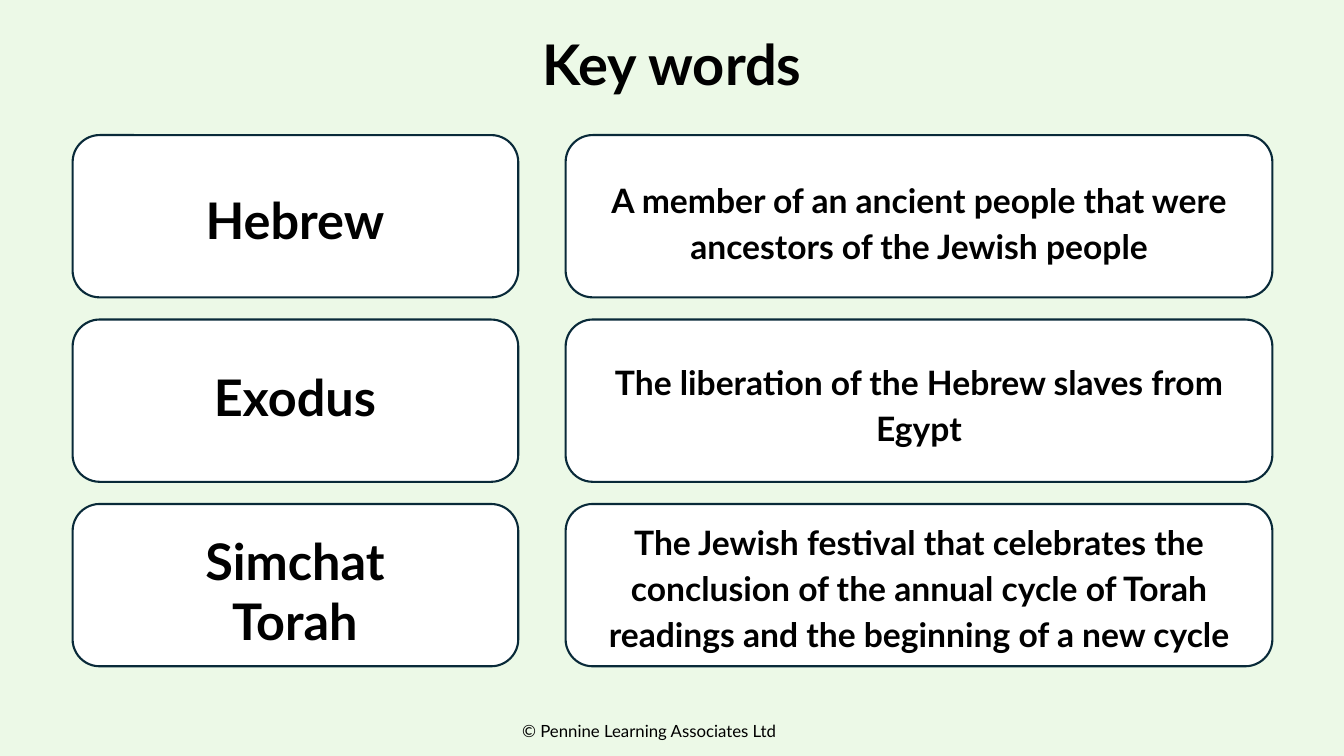
from dataclasses import dataclass

import pptx
import pptx.dml.color
import pptx.enum.shapes
import pptx.enum.text
import pptx.slide
import pptx.util

Inches = pptx.util.Inches
Align = pptx.enum.text.PP_ALIGN
Anchor = pptx.enum.text.MSO_ANCHOR


@dataclass(frozen=True)
class Theme:
    font: str = "Lato"
    background: str = "ECF9E7"
    card: str = "FFFFFF"
    outline: str = "092A39"
    ink: str = "000000"
    title_size: int = 40
    term_size: int = 36
    definition_size: int = 24
    footer_size: int = 12


@dataclass(frozen=True)
class Frame:
    left: float
    top: float
    width: float
    height: float

    def lengths(self) -> tuple[int, int, int, int]:
        return (Inches(self.left), Inches(self.top),
                Inches(self.width), Inches(self.height))


@dataclass(frozen=True)
class TextStyle:
    size: int
    bold: bool = True
    align: Align = Align.CENTER
    line_spacing: float = 1.0
    anchor: Anchor = Anchor.TOP


@dataclass(frozen=True)
class KeyWord:
    term: str
    term_top: float
    term_height: float
    definition: str
    definition_top: float
    definition_height: float


THEME = Theme()
TITLE = TextStyle(THEME.title_size, line_spacing=0.9, anchor=Anchor.MIDDLE)
TERM = TextStyle(THEME.term_size)
DEFINITION = TextStyle(THEME.definition_size, line_spacing=1.14)
FOOTER = TextStyle(THEME.footer_size, bold=False, align=Align.LEFT)

CARD_TOP, CARD_HEIGHT, CARD_PITCH = 1.34, 1.61, 1.83
TERM_CARD_LEFT, TERM_CARD_WIDTH = 0.72, 4.42
TERM_LEFT, TERM_WIDTH = 1.58, 2.69
DEFINITION_LEFT, DEFINITION_WIDTH = 5.61, 7.01

KEY_WORDS = [
    KeyWord("Hebrew", 1.83, 0.71,
            "A member of an ancient people that were ancestors of the Jewish people",
            1.68, 1.01),
    KeyWord("Exodus", 3.58, 0.71,
            "The liberation of the Hebrew slaves from Egypt",
            3.49, 1.01),
    KeyWord("Simchat Torah", 5.21, 1.31,
            "The Jewish festival that celebrates the conclusion of the annual cycle "
            "of Torah readings and the beginning of a new cycle",
            5.07, 1.47),
]


def color(value: str) -> pptx.dml.color.RGBColor:
    return pptx.dml.color.RGBColor.from_string(value)


def add_card(page: pptx.slide.Slide, frame: Frame) -> None:
    card = page.shapes.add_shape(
        pptx.enum.shapes.MSO_SHAPE.ROUNDED_RECTANGLE, *frame.lengths())
    card.shadow.inherit = False
    card.fill.solid()
    card.fill.fore_color.rgb = color(THEME.card)
    card.line.color.rgb = color(THEME.outline)
    card.line.width = pptx.util.Pt(1.5)


def add_text(page: pptx.slide.Slide, frame: Frame, text: str, style: TextStyle) -> None:
    box = page.shapes.add_textbox(*frame.lengths())
    box.text_frame.word_wrap = True
    box.text_frame.vertical_anchor = style.anchor
    para = box.text_frame.paragraphs[0]
    para.alignment = style.align
    para.line_spacing = style.line_spacing
    span = para.add_run()
    span.text = text
    span.font.name = THEME.font
    span.font.size = pptx.util.Pt(style.size)
    span.font.bold = style.bold
    span.font.color.rgb = color(THEME.ink)


def add_key_word(page: pptx.slide.Slide, row: int, word: KeyWord) -> None:
    top = CARD_TOP + row * CARD_PITCH
    add_card(page, Frame(TERM_CARD_LEFT, top, TERM_CARD_WIDTH, CARD_HEIGHT))
    add_card(page, Frame(DEFINITION_LEFT, top, DEFINITION_WIDTH, CARD_HEIGHT))
    add_text(page, Frame(TERM_LEFT, word.term_top, TERM_WIDTH, word.term_height),
             word.term, TERM)
    add_text(page, Frame(DEFINITION_LEFT, word.definition_top,
                         DEFINITION_WIDTH, word.definition_height),
             word.definition, DEFINITION)


def main() -> None:
    deck = pptx.Presentation()
    deck.slide_width = Inches(13.33)
    deck.slide_height = Inches(7.5)
    page = deck.slides.add_slide(deck.slide_layouts[6])
    page.background.fill.solid()
    page.background.fill.fore_color.rgb = color(THEME.background)

    add_text(page, Frame(5.08, 7.1, 3.18, 0.3),
             "© Pennine Learning Associates Ltd", FOOTER)
    add_text(page, Frame(0, 0, 13.33, 1.34), "Key words", TITLE)
    for row, word in enumerate(KEY_WORDS):
        add_key_word(page, row, word)

    deck.save("out.pptx")


if __name__ == "__main__":
    main()
